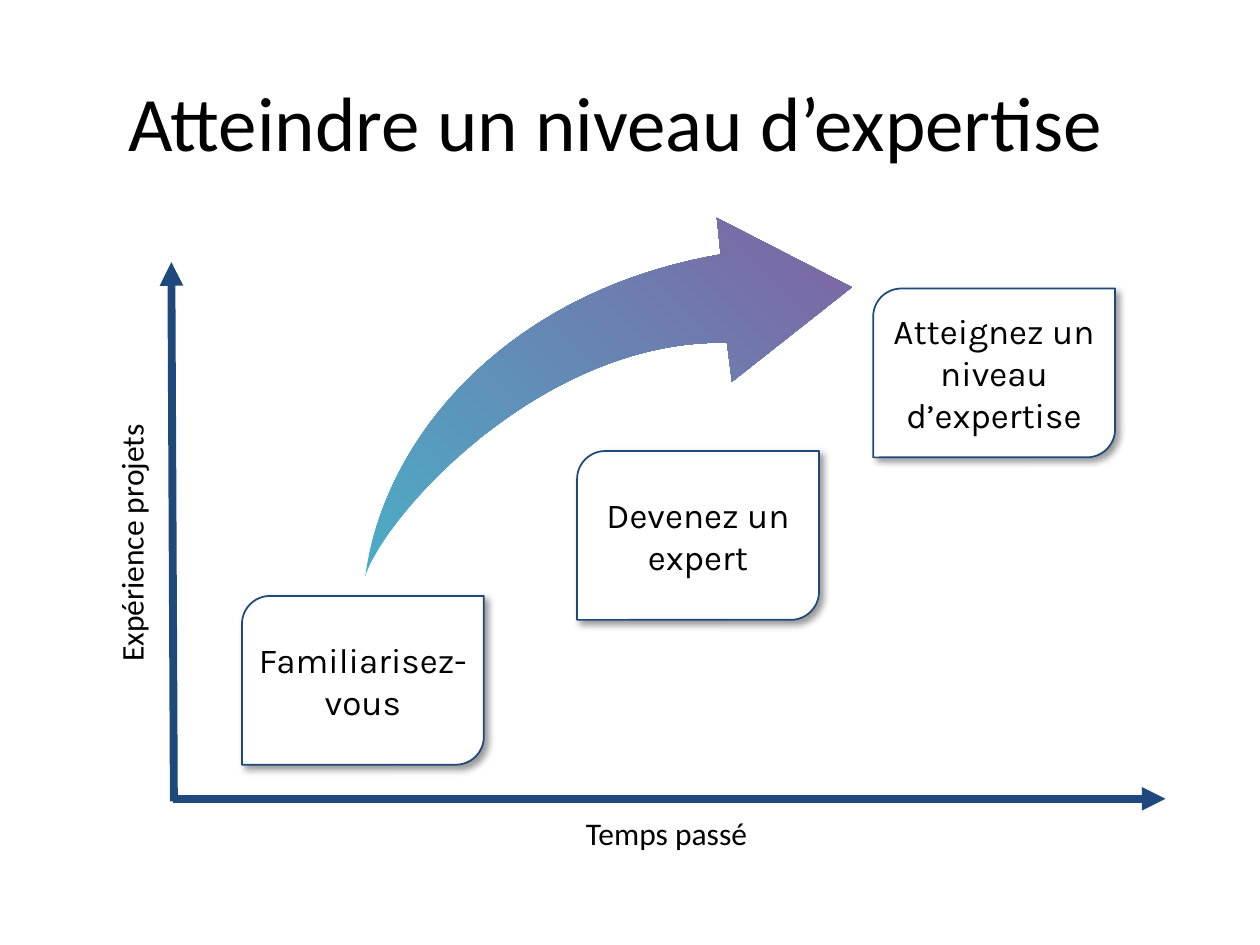
from lxml import etree
from pptx import Presentation
from pptx import util as u
from pptx.dml.color import RGBColor
from pptx.enum import shapes, text
from pptx.oxml import parse_xml
from pptx.oxml.ns import nsdecls, qn

NAVY, BLACK, WHITE = "1F497D", "000000", "FFFFFF"
MIDDLE, TOP = text.MSO_ANCHOR.MIDDLE, text.MSO_ANCHOR.TOP
CENTER, LEFT = text.PP_ALIGN.CENTER, text.PP_ALIGN.LEFT


def color(value):
    return RGBColor.from_string(value)


def write(shape, words, font_name, size, alignment, **frame_format):
    frame = shape.text_frame
    for name, value in {"word_wrap": True, **frame_format}.items():
        setattr(frame, name, value)
    paragraph = frame.paragraphs[0]
    paragraph.text = words
    paragraph.alignment = alignment
    for name, value in {"name": font_name, "size": u.Pt(size)}.items():
        setattr(paragraph.font, name, value)
    paragraph.font.color.rgb = color(BLACK)


presentation = Presentation()
presentation.slide_width, presentation.slide_height = u.Inches(10), u.Inches(7.5)
slide = presentation.slides.add_slide(presentation.slide_layouts[6])

# Axes
for ends in [(1.37, 6.34, 9.25, 6.34), (1.38, 6.36, 1.36, 2.08)]:
    axis = slide.shapes.add_connector(
        shapes.MSO_CONNECTOR.STRAIGHT, *[u.Inches(end) for end in ends])
    axis.line.width = u.Pt(4.5)
    axis.line.color.rgb = color(NAVY)
    etree.SubElement(axis.line._get_or_add_ln(), qn("a:tailEnd"), type="triangle")
    etree.SubElement(axis._element.spPr, qn("a:effectLst"))

# Title and axis labels
for words, box, size, alignment, anchor, rotation in [
    ("Temps passé", (1.58, 6.41, 7.42, 0.4), 18, CENTER, TOP, 0),
    ("Expérience projets", (-0.99, 4.11, 4.06, 0.4), 18, CENTER, TOP, 270),
    ("Atteindre un niveau d’expertise", (0.92, 0.33, 8.83, 1.25), 44, LEFT, MIDDLE, 0),
]:
    label = slide.shapes.add_textbox(*[u.Inches(length) for length in box])
    label.rotation = rotation
    write(label, words, "Calibri", size, alignment, vertical_anchor=anchor)

# Step cards with a soft shadow
margins = {f"margin_{side}": u.Inches(0.05) for side in ("left", "top", "right", "bottom")}
for words, left, top in [
    ("Familiarisez-vous", 1.92, 4.73),
    ("Devenez un expert", 4.58, 3.58),
    ("Atteignez un niveau d’expertise", 6.93, 2.29),
]:
    card = slide.shapes.add_shape(
        shapes.MSO_SHAPE.ROUND_2_DIAG_RECTANGLE,
        u.Inches(left), u.Inches(top), u.Inches(1.92), u.Inches(1.34))
    card.fill.solid()
    card.fill.fore_color.rgb = color(WHITE)
    card.line.color.rgb = color(NAVY)
    card.line.width = u.Pt(1)
    card.shadow.inherit = False
    card._element.spPr.find(qn("a:effectLst")).append(parse_xml(
        f'<a:outerShdw {nsdecls("a")} blurRad="{u.Pt(4)}" dist="{u.Pt(3)}" '
        f'dir="2700000" algn="tl" rotWithShape="0"><a:srgbClr val="{BLACK}">'
        '<a:alpha val="40000"/></a:srgbClr></a:outerShdw>'))
    write(card, words, "Karla", 20, CENTER, vertical_anchor=MIDDLE, **margins)

# Curved arrow: two Bézier edges joined by a straight-sided head
upper_edge = [(2.9, 4.57), (3.05, 3.47), (4.03, 2.31), (5.72, 2.02)]
head = [(5.69, 1.73), (6.76, 2.28), (5.81, 3.03)]
lower_edge = [(5.77, 2.72), (4.32, 2.69), (3.07, 4.06), (2.9, 4.57)]
steps = 40
edges = []
for curve in (upper_edge, lower_edge):
    edge = []
    for step in range(steps + 1):
        t = step / steps
        weights = ((1 - t) ** 3, 3 * t * (1 - t) ** 2, 3 * t ** 2 * (1 - t), t ** 3)
        edge.append([sum(w * point[i] for w, point in zip(weights, curve)) for i in (0, 1)])
    edges.append(edge)
outline = [(u.Inches(x), u.Inches(y)) for x, y in edges[0] + head + edges[1]]
builder = slide.shapes.build_freeform(*outline[0])
builder.add_line_segments(outline[1:], close=True)
arrow = builder.convert_to_shape()
arrow.shadow.inherit = False
arrow.line.fill.background()
arrow.fill.gradient()
arrow.fill.gradient_angle = 45
for stop, position, value in zip(arrow.fill.gradient_stops, (0, 1), ("4BACC6", "8064A2")):
    stop.position = position
    stop.color.rgb = color(value)

presentation.save("out.pptx")
